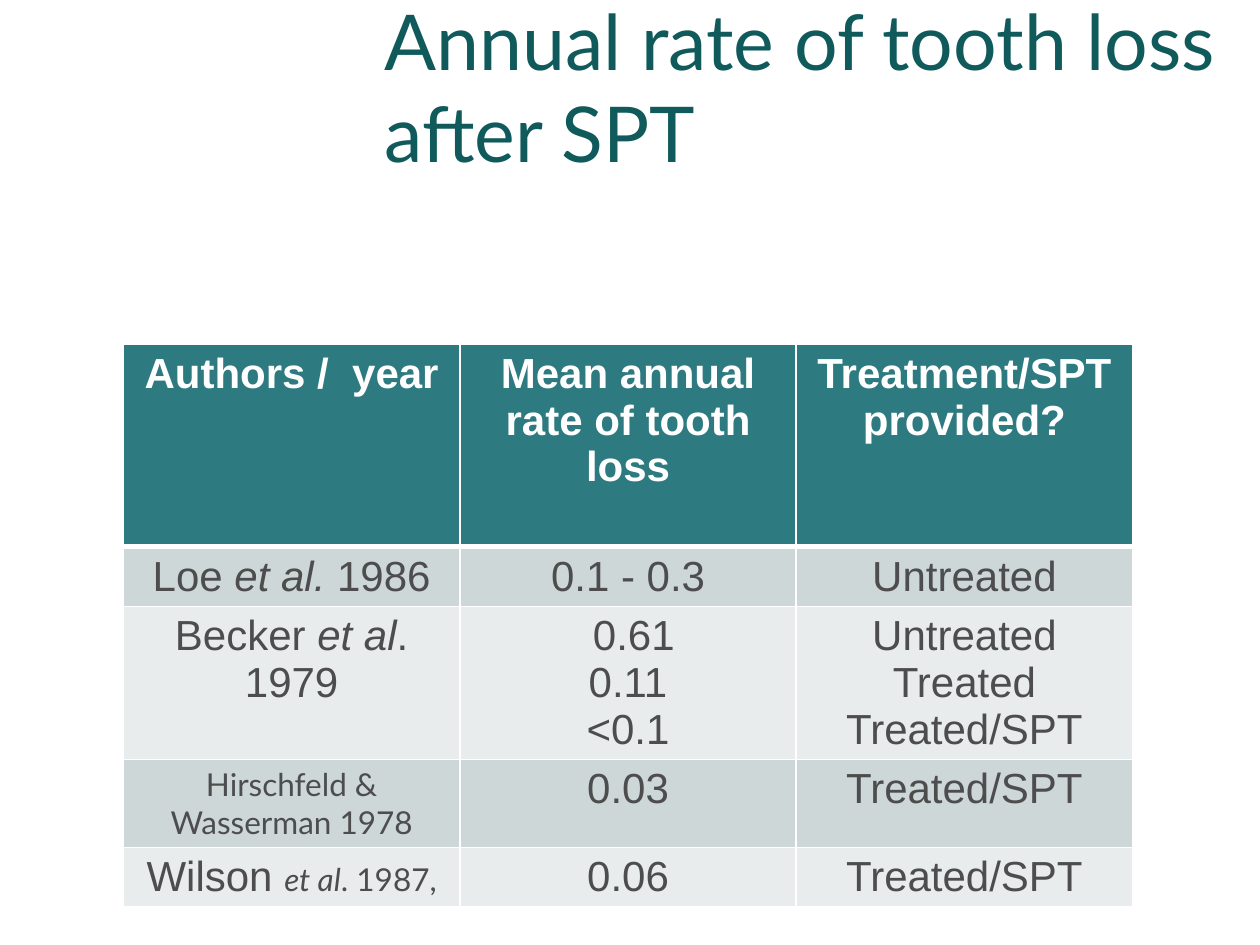
from dataclasses import dataclass

from lxml.etree import SubElement
from pptx import Presentation
from pptx.dml.color import RGBColor
from pptx.enum.text import MSO_ANCHOR as Anchor, MSO_AUTO_SIZE as AutoSize, PP_ALIGN as Align
from pptx.oxml.ns import qn
from pptx.util import Inches, Pt


@dataclass(frozen=True)
class Theme:
    """Colours, fonts and type sizes of the slide."""
    title: str = "105A5B"
    header: str = "2D7A80"
    bands: tuple = ("CDD7D8", "E8ECED")
    text: str = "4D4D4D"
    white: str = "FFFFFF"
    title_font: str = "Lato"
    table_font: str = "Arial"
    title_size: int = 44
    table_size: int = 24
    small_size: int = 18


THEME = Theme()
SMALL = {"font": THEME.title_font, "size": THEME.small_size}


def add_text(paragraph, text, *, font=THEME.table_font, size=THEME.table_size,
             color=THEME.text, bold=False, italic=False):
    """Add one formatted run to a paragraph."""
    run = paragraph.add_run()
    run.text = text
    run.font.name = font
    run.font.size = Pt(size)
    run.font.bold = bold
    run.font.italic = italic
    run.font.color.rgb = RGBColor.from_string(color)


class SlideBuilder:
    """Holds the theme and the current slide."""

    def __init__(self, slide, theme):
        """Keep the slide and its style."""
        self.slide = slide
        self.theme = theme

    def title(self, text, left, top, width, height):
        """Place and fill the title placeholder."""
        shape = self.slide.shapes.title
        shape.left, shape.top = Inches(left), Inches(top)
        shape.width, shape.height = Inches(width), Inches(height)
        frame = shape.text_frame
        frame.auto_size = AutoSize.NONE
        frame.word_wrap = True
        frame.vertical_anchor = Anchor.MIDDLE
        paragraph = frame.paragraphs[0]
        paragraph.alignment = Align.LEFT
        add_text(paragraph, text, font=self.theme.title_font,
                 size=self.theme.title_size, color=self.theme.title)

    def borders(self, cell, bottom_width):
        """Draw white lines on the four sides of a cell."""
        properties = cell._tc.get_or_add_tcPr()
        widths = {"a:lnL": 1, "a:lnR": 1, "a:lnT": 1, "a:lnB": bottom_width}
        for index, (tag, width) in enumerate(widths.items()):
            line = SubElement(properties, qn(tag), w=str(Pt(width)))
            fill = SubElement(line, qn("a:solidFill"))
            SubElement(fill, qn("a:srgbClr"), val=self.theme.white)
            properties.insert(index, line)

    def cell(self, cell, paragraphs, fill, bottom_width=1, **style):
        """Fill a cell with paragraphs, each a list of (text, format) runs."""
        cell.fill.solid()
        cell.fill.fore_color.rgb = RGBColor.from_string(fill)
        self.borders(cell, bottom_width)
        frame = cell.text_frame
        for index, runs in enumerate(paragraphs):
            paragraph = frame.add_paragraph() if index else frame.paragraphs[0]
            paragraph.alignment = Align.CENTER
            for text, run_style in runs:
                add_text(paragraph, text, **{**style, **run_style})

    def table(self, header, rows, left, top, column_width, row_heights):
        """Add a table with a header row and banded body rows."""
        shape = self.slide.shapes.add_table(
            len(rows) + 1, len(header), Inches(left), Inches(top),
            Inches(column_width * len(header)), Inches(sum(row_heights)))
        table = shape.table
        for column in table.columns:
            column.width = Inches(column_width)
        for row, height in zip(table.rows, row_heights):
            row.height = Inches(height)
        for index, text in enumerate(header):
            self.cell(table.cell(0, index), [[(text, {})]], self.theme.header,
                      bottom_width=3, color=self.theme.white, bold=True)
        for row_index, (authors, *values) in enumerate(rows):
            band = self.theme.bands[row_index % 2]
            self.cell(table.cell(row_index + 1, 0), [authors], band)
            for index, lines in enumerate(values, 1):
                paragraphs = [[(line, {})] for line in lines]
                self.cell(table.cell(row_index + 1, index), paragraphs, band)


HEADER = ["Authors /  year", "Mean annual rate of tooth loss", "Treatment/SPT provided?"]
ITALIC = {"italic": True}
ROWS = [
    ([("Loe ", {}), ("et al. ", ITALIC), ("1986", {})], ["0.1 - 0.3"], ["Untreated"]),
    ([("Becker ", {}), ("et al", ITALIC), (". 1979", {})],
     [" 0.61", "0.11", "<0.1"], ["Untreated", "Treated", "Treated/SPT"]),
    ([("Hirschfeld & Wasserman 1978", SMALL)], ["0.03"], ["Treated/SPT"]),
    ([("Wilson ", {}), ("et al", {**SMALL, **ITALIC}), (". 1987,", SMALL)],
     ["0.06"], ["Treated/SPT"]),
]


def main():
    """Build and save the slide."""
    presentation = Presentation()
    presentation.slide_width, presentation.slide_height = Inches(10), Inches(7.5)
    slide = presentation.slides.add_slide(presentation.slide_layouts.get_by_name("Title Only"))
    builder = SlideBuilder(slide, THEME)
    builder.title("Annual rate of tooth loss after SPT", 2.95, 0.29, 8, 0.78)
    builder.table(HEADER, ROWS, left=0.98, top=2.73, column_width=2.67,
                  row_heights=[1.61, 0.47, 1.21, 0.7, 0.47])
    presentation.save("out.pptx")


if __name__ == "__main__":
    main()
